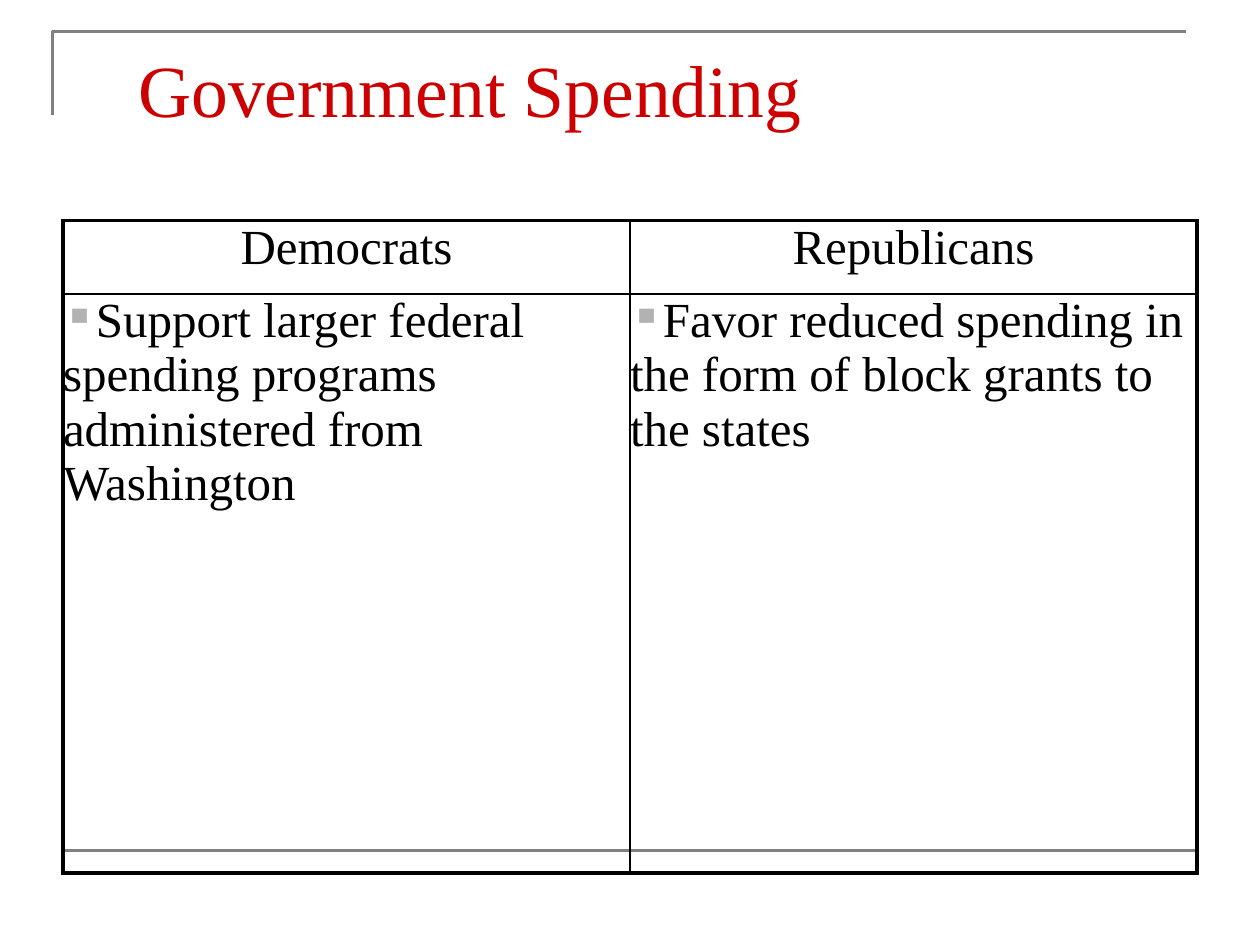
from lxml import etree
from pptx import Presentation
from pptx.dml.color import RGBColor
from pptx.enum.shapes import MSO_CONNECTOR
from pptx.enum.text import MSO_ANCHOR, PP_ALIGN
from pptx.oxml.ns import qn
from pptx.util import Pt

STRAIGHT = MSO_CONNECTOR.STRAIGHT
TOP = MSO_ANCHOR.TOP
CENTER = PP_ALIGN.CENTER
LEFT = PP_ALIGN.LEFT
FONT = "Times New Roman"
GRAY = "808080"
BLACK = "000000"
THICK = 2.25
THIN = 1


def color(value):
    return RGBColor.from_string(value)


def add_element(parent, tag, **attributes):
    return etree.SubElement(parent, qn(tag), attributes)


deck = Presentation()
deck.slide_width = Pt(720)
deck.slide_height = Pt(540)
page = deck.slides.add_slide(deck.slide_layouts[6])

builder = page.shapes.build_freeform(Pt(30), Pt(66))
builder.add_line_segments([(Pt(30), Pt(18)), (Pt(678), Pt(18))], close=False)
corner = builder.convert_to_shape()
corner.shadow.inherit = False
corner.fill.background()

footer_line = page.shapes.add_connector(STRAIGHT, Pt(36), Pt(486), Pt(684), Pt(486))
add_element(footer_line._element.spPr, "a:effectLst")

for rule in (corner, footer_line):
    rule.line.color.rgb = color(GRAY)
    rule.line.width = Pt(1.5)

title = page.shapes.add_textbox(Pt(72), Pt(21.6), Pt(612), Pt(90))
title.text_frame.word_wrap = True
title.text_frame.vertical_anchor = TOP
para = title.text_frame.paragraphs[0]
para.text = "Government Spending"
para.font.name = FONT
para.font.size = Pt(42)
para.font.color.rgb = color("CC0000")

rows = [
    ("Democrats", "Republicans"),
    (
        "Support larger federal spending programs administered from Washington",
        "Favor reduced spending in the form of block grants to the states",
    ),
]
table = page.shapes.add_table(2, 2, Pt(36), Pt(126), Pt(648), Pt(373)).table
table.first_row = False
table.horz_banding = False
for column in table.columns:
    column.width = Pt(324)
for row, height in zip(table.rows, (42, 331)):
    row.height = Pt(height)

for row_index, texts in enumerate(rows):
    for column_index, text in enumerate(texts):
        cell = table.cell(row_index, column_index)
        cell.margin_left = cell.margin_right = 0
        cell.margin_top = cell.margin_bottom = 0
        cell.vertical_anchor = TOP

        para = cell.text_frame.paragraphs[0]
        para.text = text
        para.alignment = CENTER if row_index == 0 else LEFT
        para.font.name = FONT
        para.font.size = Pt(28)
        para.font.color.rgb = color(BLACK)
        if row_index == 1:
            properties = para._p.get_or_add_pPr()
            bullet_color = etree.Element(qn("a:buClr"))
            add_element(bullet_color, "a:srgbClr", val="B2B2B2")
            bullet_size = etree.Element(qn("a:buSzPct"), val="90000")
            bullet = etree.Element(qn("a:buChar"), char="▪")
            for position, item in enumerate((bullet_color, bullet_size, bullet)):
                properties.insert(position, item)

        outer_sides = {
            "a:lnL": column_index == 0,
            "a:lnR": column_index == 1,
            "a:lnT": row_index == 0,
            "a:lnB": row_index == 1,
        }
        for side, is_outer in outer_sides.items():
            width = Pt(THICK if is_outer else THIN)
            border = add_element(cell._tc.get_or_add_tcPr(), side, w=str(width))
            border_fill = add_element(border, "a:solidFill")
            add_element(border_fill, "a:srgbClr", val=BLACK)
        cell.fill.background()

deck.save("out.pptx")
